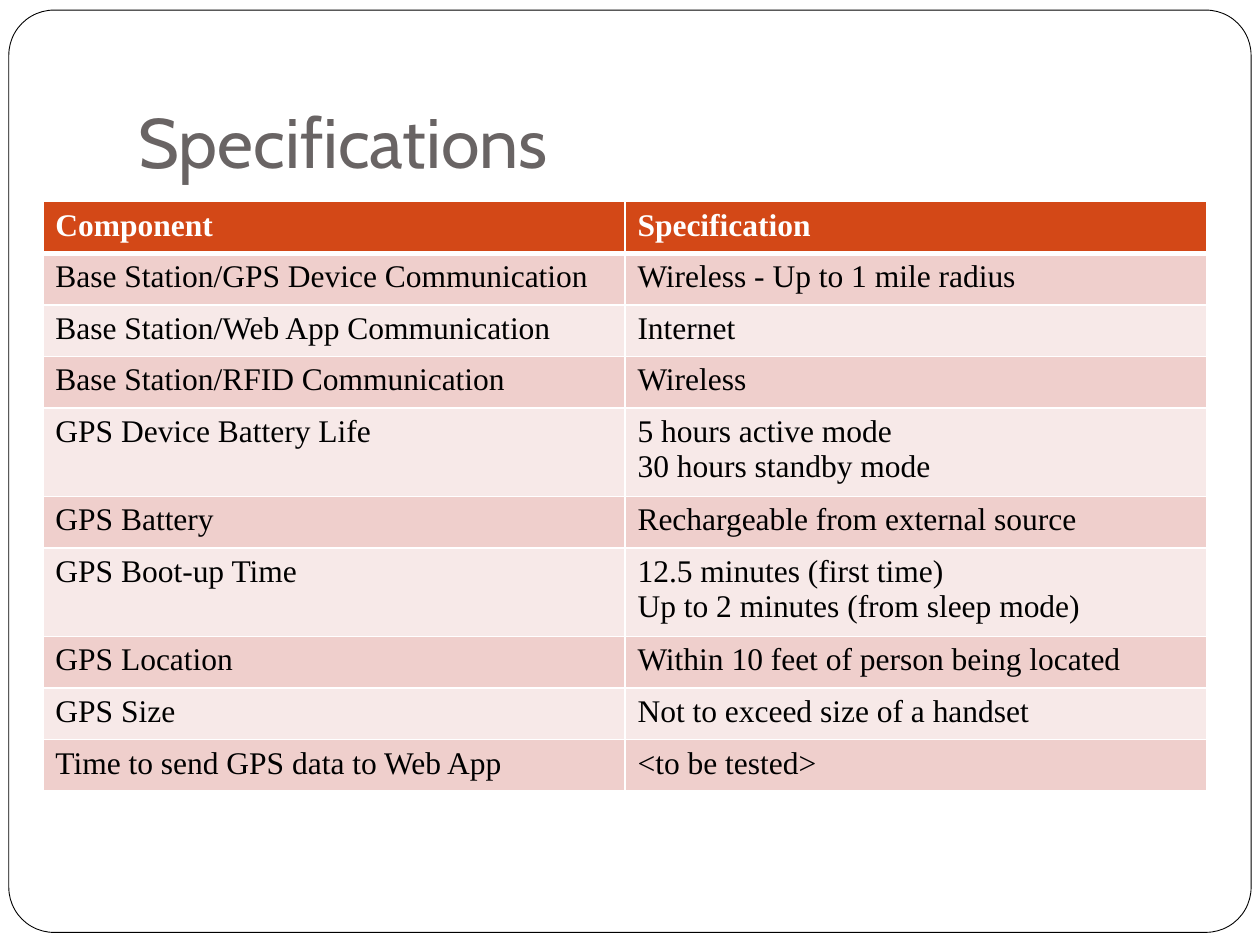
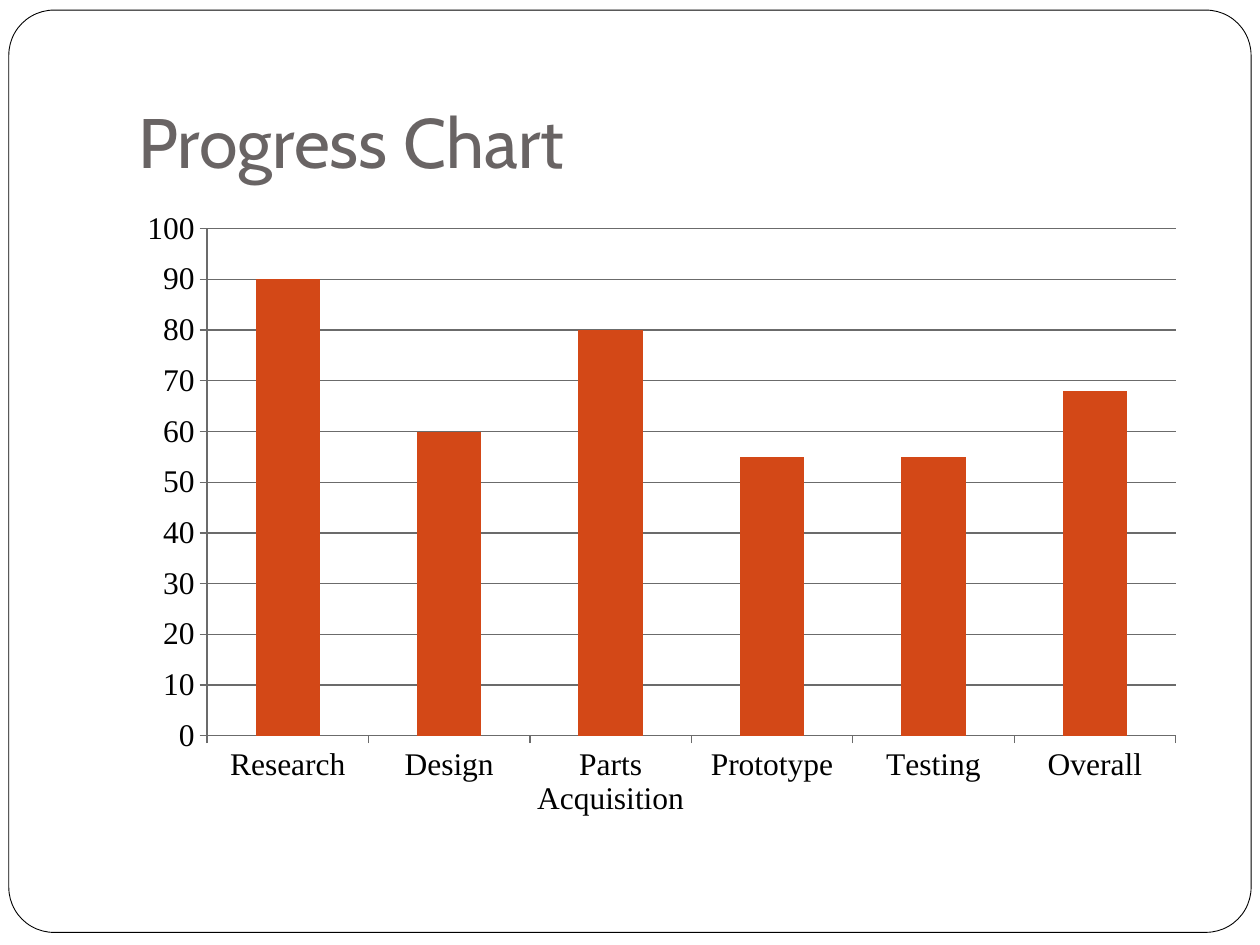
from lxml.etree import SubElement
from pptx import Presentation
from pptx.chart.data import CategoryChartData
from pptx.dml.color import RGBColor as RGB
from pptx.enum.chart import XL_CHART_TYPE as CT, XL_TICK_MARK as TICK
from pptx.enum.shapes import MSO_SHAPE as SHAPE
from pptx.enum.text import MSO_ANCHOR as ANCHOR
from pptx.oxml.ns import qn
from pptx.util import Inches, Pt

C = {
    "white": "FFFFFF",
    "black": "000000",
    "title": "696464",
    "accent": "D34817",
    "band_dark": "EFCFCC",
    "band_light": "F7E9E8",
    "axis": "6B6B6B",
}
TITLE_FONT = "Cabin"
BODY_FONT = "Times New Roman"


def put_text(tf, text, size=18, font=BODY_FONT, color="black", bold=False):
    for i, line in enumerate(text.split("\n")):
        p = tf.paragraphs[0] if i == 0 else tf.add_paragraph()
        r = p.add_run()
        r.text = line
        r.font.size = Pt(size)
        r.font.name = font
        r.font.bold = bold
        r.font.color.rgb = RGB.from_string(C[color])


def add_framed_slide(title):
    s = prs.slides.add_slide(prs.slide_layouts[6])
    sp = s.shapes.add_shape(SHAPE.ROUNDED_RECTANGLE, Inches(0.07), Inches(0.08),
                            Inches(9.86), Inches(7.32))
    sp.adjustments[0] = 0.049
    sp.shadow.inherit = False
    sp.fill.solid()
    sp.fill.fore_color.rgb = RGB.from_string(C["white"])
    sp.line.color.rgb = RGB.from_string(C["black"])
    sp.line.width = Pt(0.5)
    tf = s.shapes.add_textbox(Inches(1), Inches(0.3), Inches(8.5), Inches(1.25)).text_frame
    tf.word_wrap = True
    tf.vertical_anchor = ANCHOR.BOTTOM
    tf.margin_bottom = Inches(0.1)
    put_text(tf, title, size=40, font=TITLE_FONT, color="title")
    return s


prs = Presentation()
prs.slide_width = Inches(10)
prs.slide_height = Inches(7.5)

s = add_framed_slide("Specifications")
specs = [
    ("Component", "Specification"),
    ("Base Station/GPS Device Communication", "Wireless - Up to 1 mile radius"),
    ("Base Station/Web App Communication", "Internet"),
    ("Base Station/RFID Communication", "Wireless"),
    ("GPS Device Battery Life", "5 hours active mode\n30 hours standby mode"),
    ("GPS Battery", "Rechargeable from external source"),
    ("GPS Boot-up Time", "12.5 minutes (first time)\nUp to 2 minutes (from sleep mode)"),
    ("GPS Location", "Within 10 feet of person being located"),
    ("GPS Size", "Not to exceed size of a handset"),
    ("Time to send GPS data to Web App", "<to be tested>"),
]
table = s.shapes.add_table(len(specs), 2, Inches(0.34), Inches(1.6),
                           Inches(9.24), Inches(4.64)).table
for col in table.columns:
    col.width = Inches(4.62)
for i, spec_row in enumerate(specs):
    header = i == 0
    table.rows[i].height = Inches(0.65 if "\n" in spec_row[1] else 0.41)
    fill = "accent" if header else "band_dark" if i % 2 else "band_light"
    for j, text in enumerate(spec_row):
        cell = table.cell(i, j)
        put_text(cell.text_frame, text, color="white" if header else "black", bold=header)
        tcPr = cell._tc.get_or_add_tcPr()
        for side in ("L", "R", "T", "B"):
            thick = (header and side == "B") or (i == 1 and side == "T")
            ln = SubElement(tcPr, qn(f"a:ln{side}"), w=str(Pt(3 if thick else 1)))
            SubElement(SubElement(ln, qn("a:solidFill")), qn("a:srgbClr"), val=C["white"])
        cell.fill.solid()
        cell.fill.fore_color.rgb = RGB.from_string(C[fill])

s = add_framed_slide("Progress Chart")
data = CategoryChartData()
data.categories = ["Research", "Design", "Parts Acquisition", "Prototype", "Testing", "Overall"]
data.add_series("Series 1", [90, 60, 80, 55, 55, 68])
chart = s.shapes.add_chart(CT.COLUMN_STACKED, Inches(1), Inches(1.58),
                           Inches(8.5), Inches(5), data).chart
chart.has_title = False
chart.has_legend = False
chart.font.size = Pt(18)
chart.font.name = BODY_FONT
chart.font.color.rgb = RGB.from_string(C["black"])

plot = chart.plots[0]
plot.gap_width = 150
plot.overlap = 100
plot.vary_by_categories = False
bars = plot.series[0].format.fill
bars.solid()
bars.fore_color.rgb = RGB.from_string(C["accent"])

val_axis = chart.value_axis
val_axis.minimum_scale = 0
val_axis.maximum_scale = 100
val_axis.major_unit = 10
val_axis.has_major_gridlines = True
for axis in (chart.category_axis, val_axis):
    axis.major_tick_mark = TICK.OUTSIDE
    axis.minor_tick_mark = TICK.NONE
for part in (chart.category_axis, val_axis, val_axis.major_gridlines):
    part.format.line.color.rgb = RGB.from_string(C["axis"])
    part.format.line.width = Pt(0.75)

prs.save("out.pptx")
